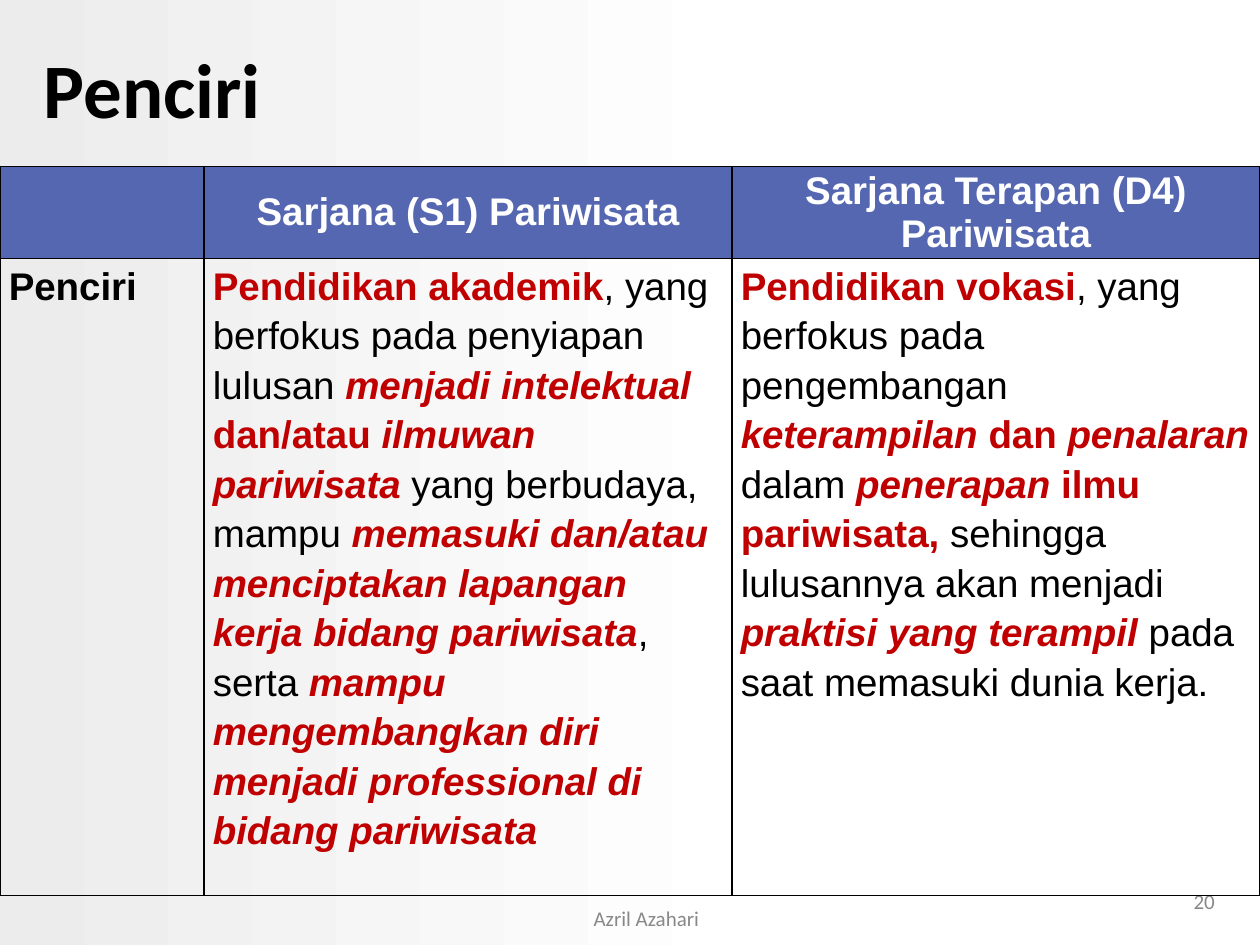
from lxml import etree
from pptx import Presentation
from pptx.dml.color import RGBColor
from pptx.enum.text import MSO_ANCHOR, PP_ALIGN
from pptx.oxml.ns import qn
from pptx.util import Inches, Pt

LEFT, MID, RIGHT = PP_ALIGN.LEFT, PP_ALIGN.CENTER, PP_ALIGN.RIGHT
TOP, CENTER = MSO_ANCHOR.TOP, MSO_ANCHOR.MIDDLE
COLORS = {"black": "000000", "white": "FFFFFF", "red": "C00000",
          "blue": "5667B1", "gray": "888888", "pale": "ECECEC"}


def rgb(name):
    return RGBColor.from_string(COLORS[name])


def add_run(para, text, size, face, color, bold=False, italic=False):
    run = para.add_run()
    run.text = text
    font = run.font
    font.size, font.name = Pt(size), face
    font.bold, font.italic = bold, italic
    font.color.rgb = rgb(color)


prs = Presentation()
prs.slide_width, prs.slide_height = Inches(10), Inches(7.5)
slide = prs.slides.add_slide(prs.slide_layouts[6])

# Background: gray fading to white at 60 %
back = slide.background.fill
back.gradient()
back.gradient_angle = 0
for stop, (pos, color) in zip(back.gradient_stops, [(0, "pale"), (0.6, "white")]):
    stop.position = pos
    stop.color.rgb = rgb(color)

# Title, page number and footer
labels = [
    ("Penciri", (0.25, 0.07, 7.67, 1.25), LEFT, 44, "black", True),
    ("20", (7.41, 6.95, 2.33, 0.4), RIGHT, 12, "gray", False),
    ("Azril Azahari", (3.67, 7.04, 2.92, 0.5), MID, 12, "gray", False),
]
for text, place, align, size, color, bold in labels:
    frame = slide.shapes.add_textbox(*map(Inches, place)).text_frame
    frame.word_wrap = True
    frame.vertical_anchor = CENTER
    para = frame.paragraphs[0]
    para.alignment = align
    add_run(para, text, size, "Calibri", color, bold)

# Run styles: colour, bold, italic
STYLES = {"head": ("white", True, False), "name": ("black", True, False),
          "plain": ("black", False, False), "bold": ("red", True, False),
          "slant": ("red", True, True)}
ROWS = [
    [[],
     [("Sarjana (S1) Pariwisata", "head")],
     [("Sarjana Terapan (D4) Pariwisata", "head")]],
    [[("Penciri", "name")],
     [("Pendidikan akademik", "bold"),
      (", yang berfokus pada penyiapan lulusan ", "plain"),
      ("menjadi intelektual", "slant"),
      (" dan/atau ", "bold"),
      ("ilmuwan pariwisata ", "slant"),
      ("yang berbudaya, mampu ", "plain"),
      ("memasuki dan/atau menciptakan lapangan kerja bidang pariwisata", "slant"),
      (", serta ", "plain"),
      ("mampu mengembangkan diri menjadi professional di bidang pariwisata", "slant")],
     [("Pendidikan vokasi", "bold"),
      (", yang berfokus pada pengembangan ", "plain"),
      ("keterampilan", "slant"),
      (" dan ", "bold"),
      ("penalaran ", "slant"),
      ("dalam ", "plain"),
      ("penerapan", "slant"),
      (" ilmu pariwisata,", "bold"),
      (" sehingga lulusannya akan menjadi ", "plain"),
      ("praktisi yang terampil ", "slant"),
      ("pada saat memasuki dunia kerja.", "plain")]],
]

# Table grid
table = slide.shapes.add_table(2, 3, Inches(0), Inches(1.32),
                               Inches(10), Inches(5.39)).table
table.first_row = table.horz_banding = False
for col, width in zip(table.columns, (1.62, 4.19, 4.19)):
    col.width = Inches(width)
for row, height in zip(table.rows, (0.68, 4.71)):
    row.height = Inches(height)

# Table cells
for r, line in enumerate(ROWS):
    head = r == 0
    for c, runs in enumerate(line):
        cell = table.cell(r, c)
        cell.margin_left = cell.margin_right = Inches(0.07)
        cell.margin_top = cell.margin_bottom = Inches(0)
        cell.vertical_anchor = CENTER if head else TOP
        para = cell.text_frame.paragraphs[0]
        para.alignment = MID if head else LEFT
        para.line_spacing = 1.0 if head else 1.15
        for text, style in runs:
            add_run(para, text, 22, "Arial", *STYLES[style])

        # Borders go ahead of the fill
        props = cell._tc.get_or_add_tcPr()
        for side in ("lnL", "lnR", "lnT", "lnB"):
            edge = etree.SubElement(props, qn("a:" + side), w=str(Pt(1)))
            solid = etree.SubElement(edge, qn("a:solidFill"))
            etree.SubElement(solid, qn("a:srgbClr"), val=COLORS["black"])
        if head:
            cell.fill.solid()
            cell.fill.fore_color.rgb = rgb("blue")
        else:
            cell.fill.background()

prs.save("out.pptx")
